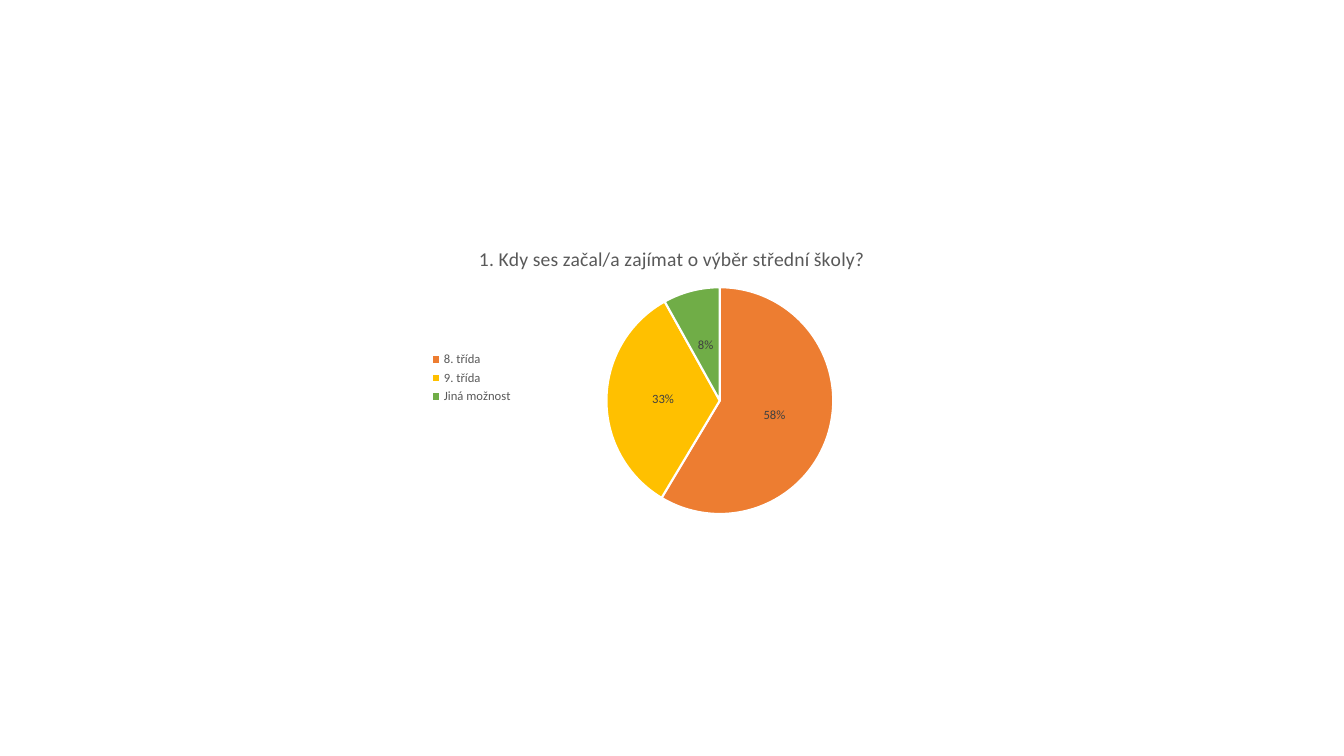
from dataclasses import dataclass

from lxml import etree
from pptx import Presentation
from pptx.chart.data import CategoryChartData
from pptx.dml.color import RGBColor
from pptx.enum.chart import XL_CHART_TYPE, XL_LABEL_POSITION, XL_LEGEND_POSITION
from pptx.oxml.ns import qn
from pptx.util import Emu, Pt

PIE = XL_CHART_TYPE.PIE
CENTER = XL_LABEL_POSITION.CENTER
LEFT = XL_LEGEND_POSITION.LEFT
PX = 9525
COLORS = {
    "orange": "ED7D31",
    "yellow": "FFC000",
    "green": "70AD47",
    "white": "FFFFFF",
    "text": "595959",
    "label": "404040",
}
EDGE = {"xMode": "edge", "yMode": "edge"}
TITLE_LAYOUT = {**EDGE, "x": "0.11", "y": "0.05"}
PIE_LAYOUT = {
    "layoutTarget": "inner",
    **EDGE,
    "x": "0.37",
    "y": "0.2",
    "w": "0.45",
    "h": "0.75",
}


@dataclass(frozen=True)
class Slice:
    name: str
    percent: int
    color: str


SLICES = [
    Slice("8. třída", 58, "orange"),
    Slice("9. třída", 33, "yellow"),
    Slice("Jiná možnost", 8, "green"),
]


def px(n: int) -> Emu:
    return Emu(n * PX)


def rgb(name: str) -> RGBColor:
    return RGBColor.from_string(COLORS[name])


def set_font(font, size: int, color: str) -> None:
    for key, value in {"name": "Calibri", "size": Pt(size), "bold": False}.items():
        setattr(font, key, value)
    font.color.rgb = rgb(color)


def set_layout(parent, index: int, values: dict[str, str]) -> None:
    for old in parent.findall(qn("c:layout")):
        parent.remove(old)
    layout = etree.Element(qn("c:layout"))
    parent.insert(index, layout)
    manual = etree.SubElement(layout, qn("c:manualLayout"))
    for tag, value in values.items():
        etree.SubElement(manual, qn(f"c:{tag}")).set("val", value)


def add_pie(s, title: str, slices: list[Slice]) -> None:
    data = CategoryChartData(number_format='0"%"')
    data.categories = [item.name for item in slices]
    data.add_series("Series 1", [item.percent for item in slices])
    chart = s.shapes.add_chart(PIE, px(400), px(216), px(480), px(288), data).chart
    set_font(chart.font, 10, "text")

    chart.has_title = True
    p = chart.chart_title.text_frame.paragraphs[0]
    r = p.add_run()
    r.text = title
    set_font(r.font, 14, "text")
    title_el = chart.chart_title.text_frame._txBody.getparent().getparent()
    set_layout(title_el, 1, TITLE_LAYOUT)

    chart.has_legend = True
    legend = chart.legend
    legend.position = LEFT
    legend.include_in_layout = False
    set_font(legend.font, 9, "text")

    plot = chart.plots[0]
    plot.vary_by_categories = True
    plot.has_data_labels = True
    labels = plot.data_labels
    for key, value in {
        "show_value": True,
        "show_percentage": False,
        "number_format": '0"%"',
        "number_format_is_linked": False,
        "position": CENTER,
    }.items():
        setattr(labels, key, value)
    set_font(labels.font, 9, "label")

    for i, item in enumerate(slices):
        fmt = plot.series[0].points[i].format
        fmt.fill.solid()
        fmt.fill.fore_color.rgb = rgb(item.color)
        fmt.line.color.rgb = rgb("white")
        fmt.line.width = Pt(1.5)

    set_layout(chart._chartSpace.find(f".//{qn('c:plotArea')}"), 0, PIE_LAYOUT)


def main() -> None:
    prs = Presentation()
    prs.slide_width, prs.slide_height = px(1280), px(720)
    s = prs.slides.add_slide(prs.slide_layouts[6])
    add_pie(s, "1. Kdy ses začal/a zajímat o výběr střední školy?", SLICES)
    prs.save("out.pptx")


if __name__ == "__main__":
    main()
